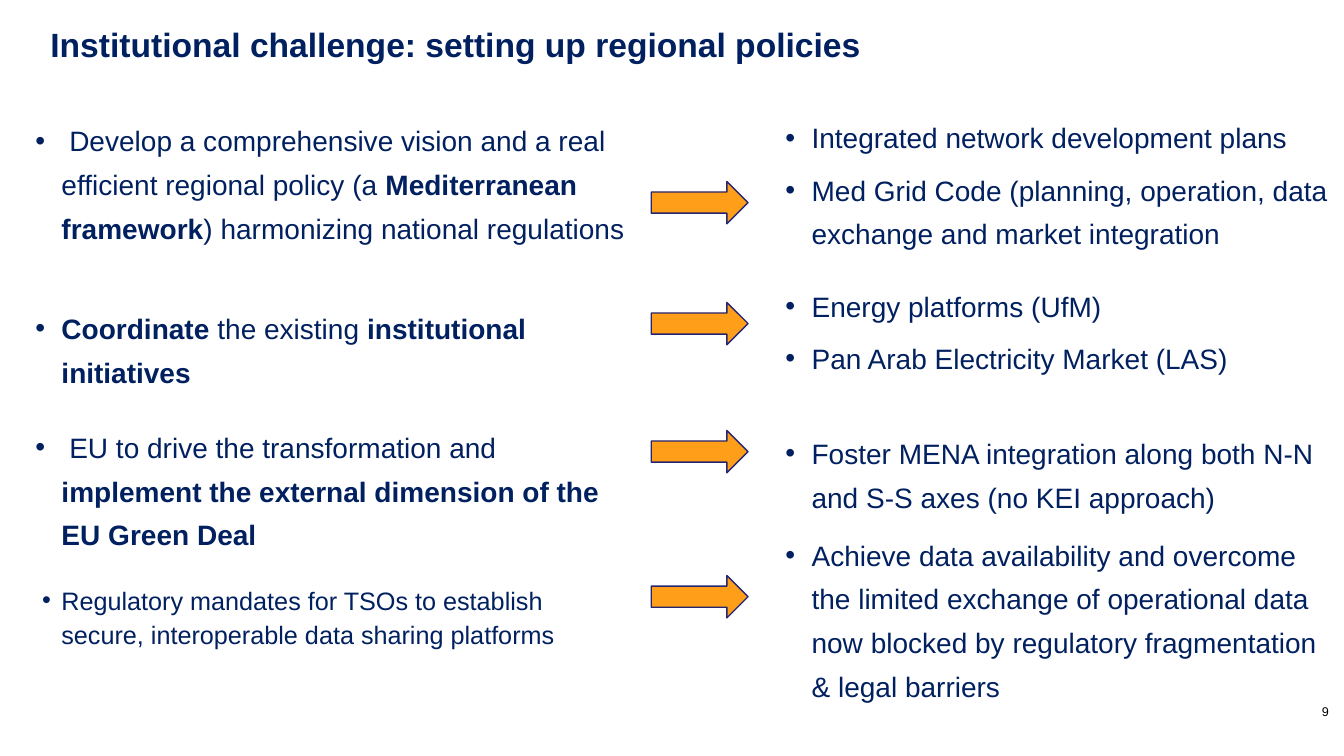
from lxml.etree import SubElement as Sub
from pptx import Presentation
from pptx.dml.color import RGBColor
from pptx.enum.shapes import MSO_SHAPE as Kind
from pptx.enum.text import MSO_ANCHOR as Anchor, MSO_AUTO_SIZE as Fit, PP_ALIGN as Align
from pptx.oxml.ns import qn
from pptx.util import Inches, Pt


def tint(code):
    return RGBColor.from_string(code)


def write(box, text, at, size=20, color="002060", bold=False, lead=1.0,
          gap=0, after=0, inset=(0.03, 0.03), indent=0, anchor=Anchor.TOP):
    box.left, box.top, box.width, box.height = map(Inches, at)
    frame = box.text_frame
    frame.word_wrap = True
    frame.auto_size = Fit.NONE
    frame.vertical_anchor = anchor
    frame.margin_left = frame.margin_right = Inches(inset[0])
    frame.margin_top = frame.margin_bottom = Inches(inset[1])
    for i, line in enumerate(text.split("\n")):
        para = frame.add_paragraph() if i else frame.paragraphs[0]
        if indent:
            props = para._p.get_or_add_pPr()
            props.set("marL", str(Inches(indent)))
            props.set("indent", str(-Inches(indent)))
            Sub(props, qn("a:buFont"), typeface="Arial")
            Sub(props, qn("a:buChar"), char="•")
        para.alignment = Align.LEFT
        para.line_spacing = lead
        para.space_before = Pt(gap if i else 0)
        para.space_after = Pt(after)
        for j, part in enumerate(line.split("*")):
            if part:
                run = para.add_run()
                run.text = part
                run.font.name = "Arial"
                run.font.size = Pt(size)
                run.font.bold = bold or j % 2 == 1
                run.font.color.rgb = tint(color)


deck = Presentation()
deck.slide_width, deck.slide_height = Inches(13.33), Inches(7.5)
slide = deck.slides.add_slide(deck.slide_layouts[3])
shapes = slide.shapes

write(shapes.title, "Institutional challenge: setting up regional policies",
      (0.44, 0.22, 9.77, 0.55), size=24, bold=True, lead=0.9, inset=(0.06, 0.06))

goals = [
    (1.1, 1.7, " Develop a comprehensive vision and a real efficient regional policy "
     "(a *Mediterranean framework*) harmonizing national regulations"),
    (2.96, 0.94, "*Coordinate *the existing *institutional initiatives*"),
    (4.14, 1.34, " EU to drive the transformation and"
     "* implement the external dimension of the EU Green Deal*"),
]
steps = [
    (1.07, 1.41, "Integrated network development plans\n"
     "Med Grid Code (planning, operation, data exchange and market integration"),
    (2.74, 0.97, "Energy platforms (UfM)\nPan Arab Electricity Market (LAS)"),
    (4.2, 0.89, "Foster MENA integration along both N-N and S-S axes (no KEI approach)"),
    (5.21, 1.76, "Achieve data availability and overcome the limited exchange of "
     "operational data now blocked by regulatory fragmentation & legal barriers"),
]
for body, left, width, items in [(1, 0.32, 5.91, goals), (2, 7.76, 5.5, steps)]:
    for i, (top, height, text) in enumerate(items):
        box = shapes.add_textbox(0, 0, 0, 0) if i else slide.placeholders[body]
        write(box, text, (left, top, width, height), lead=1.3, gap=6, indent=0.26)

write(shapes.add_textbox(0, 0, 0, 0),
      "Regulatory mandates for TSOs to establish secure, interoperable data sharing platforms",
      (0.32, 5.71, 5.91, 0.84), size=18, lead=1.15, after=6,
      inset=(0.1, 0.05), indent=0.19)

for top in (1.8, 3, 4.27, 5.71):
    arrow = shapes.add_shape(Kind.RIGHT_ARROW, Inches(6.46), Inches(top),
                             Inches(0.96), Inches(0.42))
    arrow.shadow.inherit = False
    arrow.fill.solid()
    arrow.fill.fore_color.rgb = tint("FF9E18")
    arrow.line.color.rgb = tint("252671")
    arrow.line.width = Pt(1)

write(shapes.add_textbox(0, 0, 0, 0), "9", (13.05, 6.93, 0.27, 0.26), size=9,
      color="000000", inset=(0.06, 0.06), anchor=Anchor.BOTTOM)

deck.save("out.pptx")
